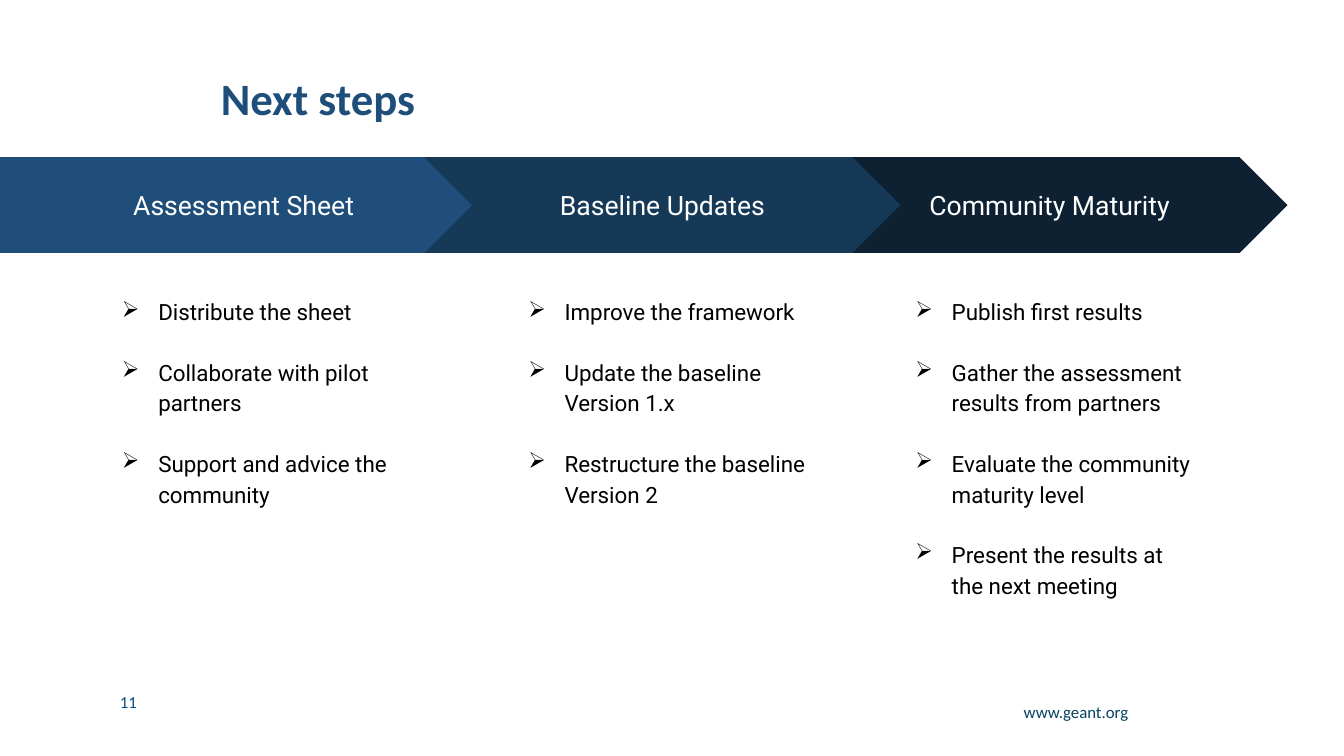
from pptx import Presentation
from pptx.dml.color import RGBColor
from pptx.enum.shapes import MSO_SHAPE as Shape
from pptx.enum.text import MSO_ANCHOR as Anchor, MSO_AUTO_SIZE as AutoSize, PP_ALIGN as Align
from pptx.oxml.ns import qn
from pptx.util import Inches, Pt
from lxml.etree import SubElement

COLORS = {"title": "1E4E79", "assessment": "1E4E79", "baseline": "163958",
          "community": "0D2133", "white": "FFFFFF", "black": "000000",
          "number": "065081", "site": "03435F"}
PITCH = 3.84
ARROW_LEFT, ARROW_TOP, ARROW_WIDTH, ARROW_HEIGHT = 4.21, 1.56, 4.72, 0.95
LIST_INSET, LIST_TOP, LIST_WIDTH, LIST_HEIGHT = 0.76, 2.79, 3.2, 3.71

STAGES = [
    ("Community Maturity", "community", Shape.CHEVRON,
     ARROW_LEFT + PITCH, ARROW_WIDTH, ARROW_LEFT + PITCH + LIST_INSET,
     ["Publish first results", "Gather the assessment results from partners",
      "Evaluate the community maturity level",
      "Present the results at the next meeting"]),
    ("Assessment Sheet", "assessment", Shape.PENTAGON, 0, 5.07, 0.94,
     ["Distribute the sheet", "Collaborate with pilot partners",
      "Support and advice the community"]),
    ("Baseline Updates", "baseline", Shape.CHEVRON,
     ARROW_LEFT, ARROW_WIDTH, ARROW_LEFT + LIST_INSET,
     ["Improve the framework", "Update the baseline\vVersion 1.x",
      "Restructure the baseline\vVersion 2"]),
]


def set_font(para, name, size, color, bold=False):
    """Format a whole paragraph."""
    font = para.font
    font.name, font.size, font.bold = name, Pt(size), bold
    font.color.rgb = RGBColor.from_string(COLORS[color])


def set_indent(para, margin, first, bullet=None):
    """Indent a paragraph in inches and give it an optional bullet."""
    props = para._p.get_or_add_pPr()
    props.set("marL", str(Inches(margin)))
    props.set("indent", str(Inches(first)))
    if bullet:
        color = SubElement(props, qn("a:buClr"))
        SubElement(color, qn("a:srgbClr")).set("val", COLORS["black"])
        SubElement(props, qn("a:buChar")).set("char", bullet)


def set_frame(frame, inset, anchor=Anchor.TOP):
    """Make a text frame wrap with equal insets."""
    frame.word_wrap, frame.auto_size = True, AutoSize.NONE
    frame.vertical_anchor = anchor
    frame.margin_left = frame.margin_right = Inches(inset)
    frame.margin_top = frame.margin_bottom = Inches(inset)


def add_title(page, text, left, top, width, height):
    """Place and format the title placeholder."""
    title = page.shapes.title
    title.left, title.top = Inches(left), Inches(top)
    title.width, title.height = Inches(width), Inches(height)
    set_frame(title.text_frame, 0.1, Anchor.MIDDLE)
    title.text_frame.margin_top = title.text_frame.margin_bottom = Inches(0.05)
    para = title.text_frame.paragraphs[0]
    para.text, para.alignment, para.line_spacing = text, Align.LEFT, 0.9
    set_indent(para, 0.5, 0.5)
    set_font(para, "Calibri", 32, "title", True)


def add_arrow(page, label, color, kind, left, width):
    """Draw one arrow of the process band with its label."""
    arrow = page.shapes.add_shape(kind, Inches(left), Inches(ARROW_TOP),
                                  Inches(width), Inches(ARROW_HEIGHT))
    arrow.adjustments[0] = 0.5
    arrow.shadow.inherit = False
    arrow.fill.solid()
    arrow.fill.fore_color.rgb = RGBColor.from_string(COLORS[color])
    arrow.line.fill.background()
    set_frame(arrow.text_frame, 0.13, Anchor.MIDDLE)
    para = arrow.text_frame.paragraphs[0]
    para.text, para.alignment = label, Align.CENTER
    set_font(para, "Roboto", 19, "white")


def add_steps(page, steps, left):
    """Write the bulleted steps below an arrow."""
    box = page.shapes.add_textbox(Inches(left), Inches(LIST_TOP),
                                  Inches(LIST_WIDTH), Inches(LIST_HEIGHT))
    frame = box.text_frame
    set_frame(frame, 0.13)
    for index, step in enumerate(steps):
        para = frame.add_paragraph() if index else frame.paragraphs[0]
        para.text, para.line_spacing = step, 1.15
        if index:
            para.space_before = Pt(21)
        set_indent(para, 0.5, -0.36, "➢")
        set_font(para, "Roboto", 16, "black")


def add_footer(page, text, color, align, left, top, width, height):
    """Write one footer item."""
    box = page.shapes.add_textbox(Inches(left), Inches(top), Inches(width), Inches(height))
    set_frame(box.text_frame, 0.1)
    box.text_frame.margin_top = box.text_frame.margin_bottom = Inches(0.05)
    para = box.text_frame.paragraphs[0]
    para.text, para.alignment = text, align
    set_font(para, "Calibri", 12, color)


def main():
    """Build the slide and save it."""
    deck = Presentation()
    deck.slide_width, deck.slide_height = Inches(13.33), Inches(7.5)
    page = deck.slides.add_slide(deck.slide_layouts[5])
    add_title(page, "Next steps", 1.09, 0.77, 10.82, 0.47)
    for label, color, kind, left, width, list_left, steps in STAGES:
        add_arrow(page, label, color, kind, left, width)
        add_steps(page, steps, list_left)
    add_footer(page, "11", "number", Align.LEFT, 1.09, 6.81, 1.45, 0.3)
    add_footer(page, "www.geant.org", "site", Align.RIGHT, 9.61, 6.91, 1.68, 0.37)
    deck.save("out.pptx")


if __name__ == "__main__":
    main()
